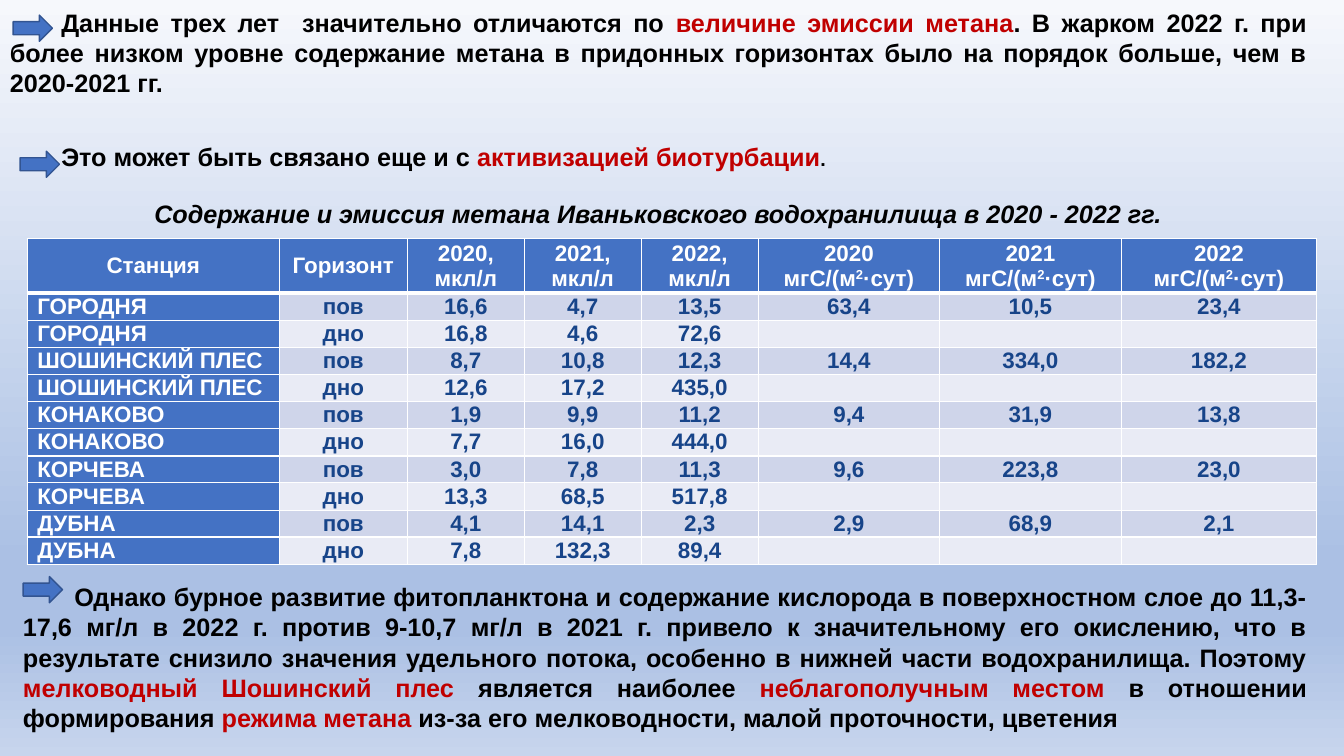
from copy import deepcopy

from lxml import etree
from pptx import Presentation
from pptx import util as u
from pptx.dml import color
from pptx.enum import shapes, text
from pptx.oxml import ns

HUES = {"blue": "4472C4", "edge": "325491", "navy": "174489", "red": "C00000",
        "black": "000000", "white": "FFFFFF", "odd": "CFD5EA", "even": "E9EBF5"}
SKY = [(0, "F6F8FC"), (0.74, "ABC0E4"), (0.83, "ABC0E4"), (1, "C7D5ED")]
FONT = "Arial"
ALIGN = text.PP_ALIGN

WIDTHS = [2.5, 1.27, 1.16, 1.16, 1.16, 1.8, 1.8, 1.94]
HEAD_H, ROW_H = 0.54, 0.266
YEARS = (2020, 2021, 2022)
# station: surface contents, bottom contents, emissions
DATA = {
    "ГОРОДНЯ": ("16,6 4,7 13,5", "16,8 4,6 72,6", "63,4 10,5 23,4"),
    "ШОШИНСКИЙ ПЛЕС": ("8,7 10,8 12,3", "12,6 17,2 435,0", "14,4 334,0 182,2"),
    "КОНАКОВО": ("1,9 9,9 11,2", "7,7 16,0 444,0", "9,4 31,9 13,8"),
    "КОРЧЕВА": ("3,0 7,8 11,3", "13,3 68,5 517,8", "9,6 223,8 23,0"),
    "ДУБНА": ("4,1 14,1 2,3", "7,8 132,3 89,4", "2,9 68,9 2,1"),
}

YEARS_NOTE = [
    ("Данные трех лет  значительно отличаются по ", "black"),
    ("величине эмиссии метана", "red"),
    (". В жарком 2022 г. при более низком уровне содержание метана в придонных "
     "горизонтах было на порядок больше, чем в 2020-2021 гг.", "black")]
CAUSE_NOTE = [
    ("Это может быть связано еще и с ", "black"),
    ("активизацией биотурбации", "red"),
    (".", "black", 14)]
BLOOM_NOTE = [
    ("Однако бурное развитие фитопланктона и содержание кислорода в поверхностном "
     "слое до 11,3-17,6 мг/л в 2022 г. против 9-10,7 мг/л в 2021 г. привело к "
     "значительному его окислению, что в результате снизило значения удельного "
     "потока, особенно в нижней части водохранилища. Поэтому ", "black"),
    ("мелководный Шошинский плес ", "red"),
    ("является наиболее ", "black"),
    ("неблагополучным местом ", "red"),
    ("в отношении формирования ", "black"),
    ("режима метана ", "red"),
    ("из-за его мелководности, малой проточности, цветения", "black")]


def rgb(name):
    return color.RGBColor.from_string(HUES.get(name, name))


def write(para, words, hue="black", size=18, italic=False, base=0):
    run = para.add_run()
    run.text = words
    font = run.font
    font.name, font.size, font.bold = FONT, u.Pt(size), True
    font.italic = italic or None
    font.color.rgb = rgb(hue)
    if base:
        font._element.set("baseline", str(base * 1000))


def place(shape, left, top, width, height):
    shape.left, shape.top = u.Inches(left), u.Inches(top)
    shape.width, shape.height = u.Inches(width), u.Inches(height)


def sky(slide):
    """Fill the background with the vertical gradient."""
    fill = slide.background.fill
    fill.gradient()
    fill.gradient_angle = 270
    stops = fill.gradient_stops
    parent = stops[0]._gs.getparent()
    while len(parent) < len(SKY):
        parent.append(deepcopy(parent[-1]))
    for stop, (pos, hue) in zip(fill.gradient_stops, SKY):
        stop.position = pos
        stop.color.rgb = rgb(hue)


def caption(slide, box):
    title = slide.shapes.title
    place(title, *box)
    frame = title.text_frame
    frame.word_wrap = True
    frame.auto_size = text.MSO_AUTO_SIZE.NONE
    frame.vertical_anchor = text.MSO_ANCHOR.TOP
    para = frame.paragraphs[0]
    para.alignment, para.line_spacing = ALIGN.JUSTIFY, 1.5
    write(para, "Содержание и эмиссия метана Иваньковского водохранилища "
                "в 2020 - 2022 гг.", italic=True)


def note(slide, box, paras):
    """Place justified paragraphs; those after the first stand apart."""
    frame = slide.shapes.add_textbox(*map(u.Inches, box)).text_frame
    frame.word_wrap = True
    for i, runs in enumerate(paras):
        para = frame.add_paragraph() if i else frame.paragraphs[0]
        para.alignment = ALIGN.JUSTIFY
        para._p.get_or_add_pPr().set("indent", str(u.Inches(0.51)))
        if i:
            para.space_before, para.line_spacing = u.Pt(20.7), 1.5
        for run in runs:
            write(para, *run)


def arrow(slide, left, top):
    box = map(u.Inches, (left, top, 0.39, 0.26))
    shape = slide.shapes.add_shape(shapes.MSO_SHAPE.RIGHT_ARROW, *box)
    shape.shadow.inherit = False
    shape.fill.solid()
    shape.fill.fore_color.rgb = rgb("blue")
    shape.line.color.rgb = rgb("edge")
    shape.line.width = u.Pt(1)


def edge(cell, row):
    """Draw white cell borders, thick under the header."""
    props = cell._tc.get_or_add_tcPr()
    wide = {(0, "B"), (1, "T")}
    for i, side in enumerate("LRTB"):
        width = u.Pt(3 if (row, side) in wide else 1)
        line = etree.Element(ns.qn(f"a:ln{side}"), w=str(width))
        fill = etree.SubElement(line, ns.qn("a:solidFill"))
        etree.SubElement(fill, ns.qn("a:srgbClr"), val=HUES["white"])
        props.insert(i, line)


def lines():
    """Return the table rows; a cell is a list of paragraphs."""
    rows = [[["Станция"], ["Горизонт"]]
            + [[f"{year},", "мкл/л"] for year in YEARS]
            + [[f"{year}", "мгС/(м²·сут)"] for year in YEARS]]
    for name, (top, floor, flux) in DATA.items():
        for level, vals, rest in (("пов", top, flux.split()), ("дно", floor, [""] * 3)):
            rows.append([[v] for v in [name, level, *vals.split(), *rest]])
    return rows


def fill_cell(cell, paras, row, col):
    lead = row == 0 or col == 0
    cell.fill.solid()
    cell.fill.fore_color.rgb = rgb("blue" if lead else "odd" if row % 2 else "even")
    edge(cell, row)
    cell.margin_top = cell.margin_bottom = 0
    cell.vertical_anchor = text.MSO_ANCHOR.MIDDLE
    frame = cell.text_frame
    for i, words in enumerate(paras):
        para = frame.add_paragraph() if i else frame.paragraphs[0]
        para.alignment = ALIGN.LEFT if row and not col else ALIGN.CENTER
        if not words:
            etree.SubElement(para._p, ns.qn("a:endParaRPr"), sz="1600")
            continue
        hue = "white" if lead else "navy"
        unit, sup, tail = words.partition("²")
        write(para, unit, hue, 16)
        if sup:
            write(para, "2", hue, 16, base=30)
            write(para, tail, hue, 16)


def methane(slide, left, top):
    rows = lines()
    box = (left, top, sum(WIDTHS), HEAD_H + ROW_H * (len(rows) - 1))
    frame = slide.shapes.add_table(len(rows), len(WIDTHS), *map(u.Inches, box))
    table = frame.table
    for col, width in zip(table.columns, WIDTHS):
        col.width = u.Inches(width)
    for r, cells in enumerate(rows):
        table.rows[r].height = u.Inches(ROW_H if r else HEAD_H)
        for c, paras in enumerate(cells):
            fill_cell(table.cell(r, c), paras, r, c)


def main():
    deck = Presentation()
    deck.slide_width, deck.slide_height = u.Inches(13.33), u.Inches(7.5)
    slide = deck.slides.add_slide(deck.slide_layouts[5])
    sky(slide)
    methane(slide, 0.27, 2.37)
    caption(slide, (1.43, 1.77, 10.78, 0.5))
    note(slide, (0, 0.02, 13.06, 1.77), [YEARS_NOTE, CAUSE_NOTE])
    note(slide, (0.13, 5.72, 12.93, 1.62), [BLOOM_NOTE])
    for spot in ((0.13, 0.15), (0.2, 1.5), (0.23, 5.72)):
        arrow(slide, *spot)
    deck.save("out.pptx")


if __name__ == "__main__":
    main()
